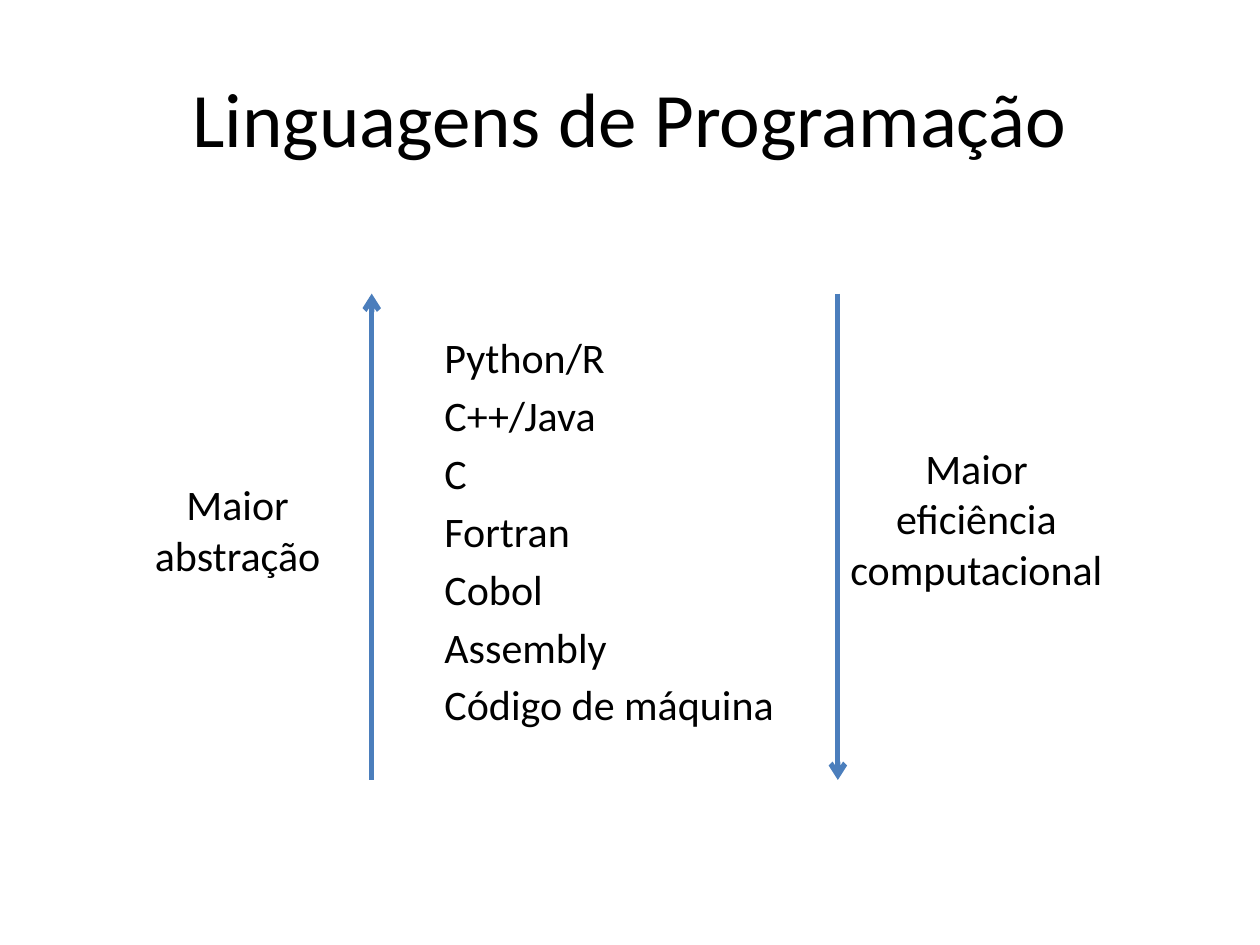
from dataclasses import dataclass

from lxml.etree import SubElement
from pptx import Presentation
from pptx.dml.color import RGBColor
from pptx.enum.shapes import MSO_CONNECTOR as Connector
from pptx.enum.text import MSO_ANCHOR as Anchor, MSO_AUTO_SIZE as AutoSize, PP_ALIGN as Align
from pptx.oxml.ns import qn
from pptx.util import Pt


@dataclass(frozen=True)
class Theme:
    font: str = "Calibri"
    ink: RGBColor = RGBColor(0, 0, 0)
    arrow: RGBColor = RGBColor(0x4B, 0x7E, 0xBC)
    title_size: float = 44
    body_size: float = 24
    line_gap: float = 4.3
    arrow_width: float = 3
    side_margin: float = 3.6


THEME = Theme()
LANGUAGES = ["Python/R", "C++/Java", "C", "Fortran", "Cobol", "Assembly", "Código de máquina"]


def add_text(slide, box, lines, size, align):
    frame = slide.shapes.add_textbox(*map(Pt, box)).text_frame
    frame.word_wrap = True
    frame.text = "\n".join(lines)
    for paragraph in frame.paragraphs:
        paragraph.alignment = align
        for run in paragraph.runs:
            run.font.name = THEME.font
            run.font.size = Pt(size)
            run.font.color.rgb = THEME.ink
    return frame


def add_title(slide, box):
    title = add_text(slide, box, ["Linguagens de Programação"], THEME.title_size, Align.CENTER)
    title.vertical_anchor = Anchor.MIDDLE


def add_languages(slide, box):
    languages = add_text(slide, box, LANGUAGES, THEME.body_size, Align.LEFT)
    for language in languages.paragraphs:
        language.space_before = Pt(THEME.line_gap)


def add_label(slide, box, lines):
    label = add_text(slide, box, lines, THEME.body_size, Align.CENTER)
    label.margin_left = label.margin_right = Pt(THEME.side_margin)
    label.auto_size = AutoSize.SHAPE_TO_FIT_TEXT


def add_arrow(slide, x, start, end):
    arrow = slide.shapes.add_connector(Connector.STRAIGHT, Pt(x), Pt(start), Pt(x), Pt(end))
    arrow.line.color.rgb = THEME.arrow
    arrow.line.width = Pt(THEME.arrow_width)
    properties = arrow.element.spPr
    SubElement(properties.find(qn("a:ln")), qn("a:tailEnd"), type="arrow")
    SubElement(properties, qn("a:effectLst"))


def add_scale(slide, box):
    left, top, width, height = box
    bottom, right = top + height, left + width
    add_languages(slide, (left + 34.5, top + 18, 215.5, 271.4))
    add_arrow(slide, left, bottom, top)
    add_arrow(slide, right, top, bottom)
    add_label(slide, (left - 141.8, top + 102.2, 130.3, 65.5), ["Maior abstração"])
    add_label(slide, (right, top + 81.4, 158.4, 94.3), ["Maior eficiência", "computacional"])


def main():
    deck = Presentation()
    deck.slide_width, deck.slide_height = Pt(720), Pt(540)
    slide = deck.slides.add_slide(deck.slide_layouts[6])
    add_title(slide, (36, 21.6, 648, 90))
    add_scale(slide, (212.4, 167.8, 266.4, 277.9))
    deck.save("out.pptx")


if __name__ == "__main__":
    main()
